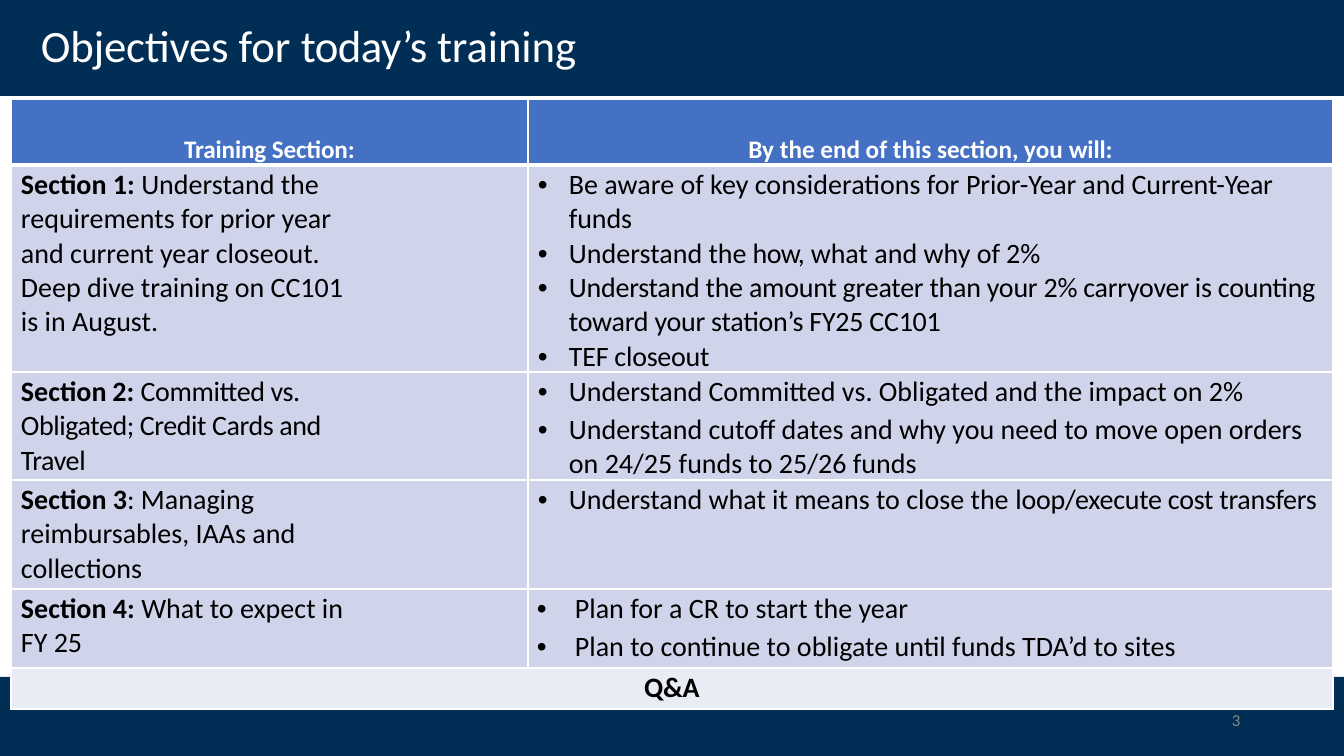
"""Build the training objectives slide with its table of sections and outcomes."""
from lxml import etree
from pptx import Presentation
from pptx import util as u
from pptx.dml.color import RGBColor
from pptx.enum import shapes, text
from pptx.oxml.ns import qn

PX = 914400 / 100.8
COLORS = {"navy": "002E55", "header": "4471C4", "body": "CFD4EA", "closing": "E9EBF5",
          "white": "FFFFFF", "black": "000000", "gray": "888888"}


def px(length):
    """Turn pixels into EMU."""
    return u.Emu(round(length * PX))


def write(paragraph, runs, size, color):
    """Add runs of (text, bold, letter spacing in hundredths of a point)."""
    for words, bold, spacing in runs:
        run = paragraph.add_run()
        run.text = words
        for name, value in {"name": "Calibri", "size": u.Pt(size), "bold": bold}.items():
            setattr(run.font, name, value)
        run.font.color.rgb = RGBColor.from_string(COLORS[color])
        if spacing:
            run.font._element.set("spc", str(spacing))


presentation = Presentation()
presentation.slide_width, presentation.slide_height = px(1344), px(756)
slide = presentation.slides.add_slide(presentation.slide_layouts[6])

for top, height in [(0, 96), (677, 79)]:
    band = slide.shapes.add_shape(shapes.MSO_SHAPE.RECTANGLE, 0, px(top), px(1344), px(height))
    band.shadow.inherit = False
    band.fill.solid()
    band.fill.fore_color.rgb = RGBColor.from_string(COLORS["navy"])
    band.line.fill.background()

title_runs = [("Objectives ", False, -20), ("for ", False, 0),
              ("today’s ", False, -40), ("training", False, -10)]
labels = [((41, 17, 1257, 56), title_runs, 32, "white"),
          ((1232, 709, 12, 23), [("3", False, 0)], 12, "gray")]
for bounds, runs, size, color in labels:
    frame = slide.shapes.add_textbox(*map(px, bounds)).text_frame
    formats = {"margin_left": 0, "margin_right": 0, "margin_top": px(1), "margin_bottom": 0,
               "word_wrap": True}
    for name, value in formats.items():
        setattr(frame, name, value)
    write(frame.paragraphs[0], runs, size, color)

sections = [
    ([("Section 1: ", True, 0),
      ("Understand the requirements for prior year and current year closeout. "
       "Deep dive training on CC101 is in August.", False, 0)],
     [[("Be aware of key considerations for ", False, 0), ("Prior-", False, -10),
       ("Year ", False, -20), ("and ", False, 0), ("Current-", False, -10),
       ("Year ", False, -20), ("funds", False, -10)],
      [("Understand the", False, 0), (" how, ", False, -40), ("what and why of", False, 0),
       (" 2", False, -40), ("%", False, -20)],
      [("Understand the amount greater than your 2% carryover is counting toward "
        "your station’s FY25 CC101", False, -20)],
      [("TEF closeout", False, -20)]], 41, 31, 0),
    ([("Section", True, 0), (" 2", True, -40), (": ", True, 0),
      ("Committed vs. Obligated; Credit Cards and Travel", False, -30)],
     [[("Understand Committed vs. Obligated and the impact on 2%", False, 0)],
      [("Understand cutoff dates and why you need to move open orders "
        "on 24/25 funds to 25/26 funds", False, 0)]], 41, 31, 2.3),
    ([("Section 3", True, 0),
      (": Managing reimbursables, IAAs and collections", False, 0)],
     [[("Understand what it means to close the ", False, 0),
       ("loop/execute cost transfers", False, -20)]], 41, 31, 2.3),
    ([("Section 4: ", True, 0), ("What to expect in FY 25", False, 0)],
     [[("Plan for a CR to start the year", False, 0)],
      [("Plan to continue to obligate until funds TDA’d to sites", False, 0)]], 47, 38, 2.3),
]
headings = [[("Training Section:", True, -10)],
            [("By the end of this section, you", True, 0), (" will:", True, -10)]]
column_widths = [517, 805]
row_heights = [66, 207, 108, 109, 79, 41]
closing_row = len(row_heights) - 1

table = slide.shapes.add_table(len(row_heights), 2, px(11), px(99),
                               px(sum(column_widths)), px(sum(row_heights))).table
table.first_row = table.horz_banding = False
for column, width in zip(table.columns, column_widths):
    column.width = px(width)
for row, height in zip(table.rows, row_heights):
    row.height = px(height)

for row_index, row in enumerate(table.rows):
    fill = {0: "header", closing_row: "closing"}.get(row_index, "body")
    widths = {"lnL": 1, "lnR": 1, "lnT": 3 if row_index == 1 else 1,
              "lnB": 3 if row_index == 0 else 1}
    for cell in row.cells:
        formats = {"margin_left": 0, "margin_right": 0, "margin_top": px(3), "margin_bottom": 0}
        for name, value in formats.items():
            setattr(cell, name, value)
        properties = cell._tc.get_or_add_tcPr()
        for side, width in widths.items():
            border = etree.SubElement(properties, qn(f"a:{side}"), w=str(u.Pt(width)))
            solid = etree.SubElement(border, qn("a:solidFill"))
            etree.SubElement(solid, qn("a:srgbClr"), val=COLORS["white"])
        cell.fill.solid()
        cell.fill.fore_color.rgb = RGBColor.from_string(COLORS[fill])

for cell, runs in zip(table.rows[0].cells, headings):
    cell.vertical_anchor = text.MSO_ANCHOR.BOTTOM
    paragraph = cell.text_frame.paragraphs[0]
    paragraph.alignment = text.PP_ALIGN.CENTER
    write(paragraph, runs, 18, "white")

for row_index, (section, outcomes, indent, hanging, gap) in enumerate(sections, 1):
    section_cell, outcome_cell = table.rows[row_index].cells
    section_cell.margin_left, section_cell.margin_right = px(10), px(168)
    write(section_cell.text_frame.paragraphs[0], section, 20, "black")
    frame = outcome_cell.text_frame
    for index, runs in enumerate(outcomes):
        paragraph = frame.add_paragraph() if index else frame.paragraphs[0]
        properties = paragraph._p.get_or_add_pPr()
        properties.set("marL", str(px(indent)))
        properties.set("indent", str(-px(hanging)))
        etree.SubElement(properties, qn("a:buFont"), typeface="Arial")
        etree.SubElement(properties, qn("a:buChar"), char="•")
        if index:
            paragraph.space_before = u.Pt(gap)
        write(paragraph, runs, 20, "black")

closing = table.cell(closing_row, 0)
closing.merge(table.cell(closing_row, 1))
paragraph = closing.text_frame.paragraphs[0]
paragraph.alignment = text.PP_ALIGN.CENTER
write(paragraph, [("Q&A", True, -20)], 20, "black")

presentation.save("out.pptx")
